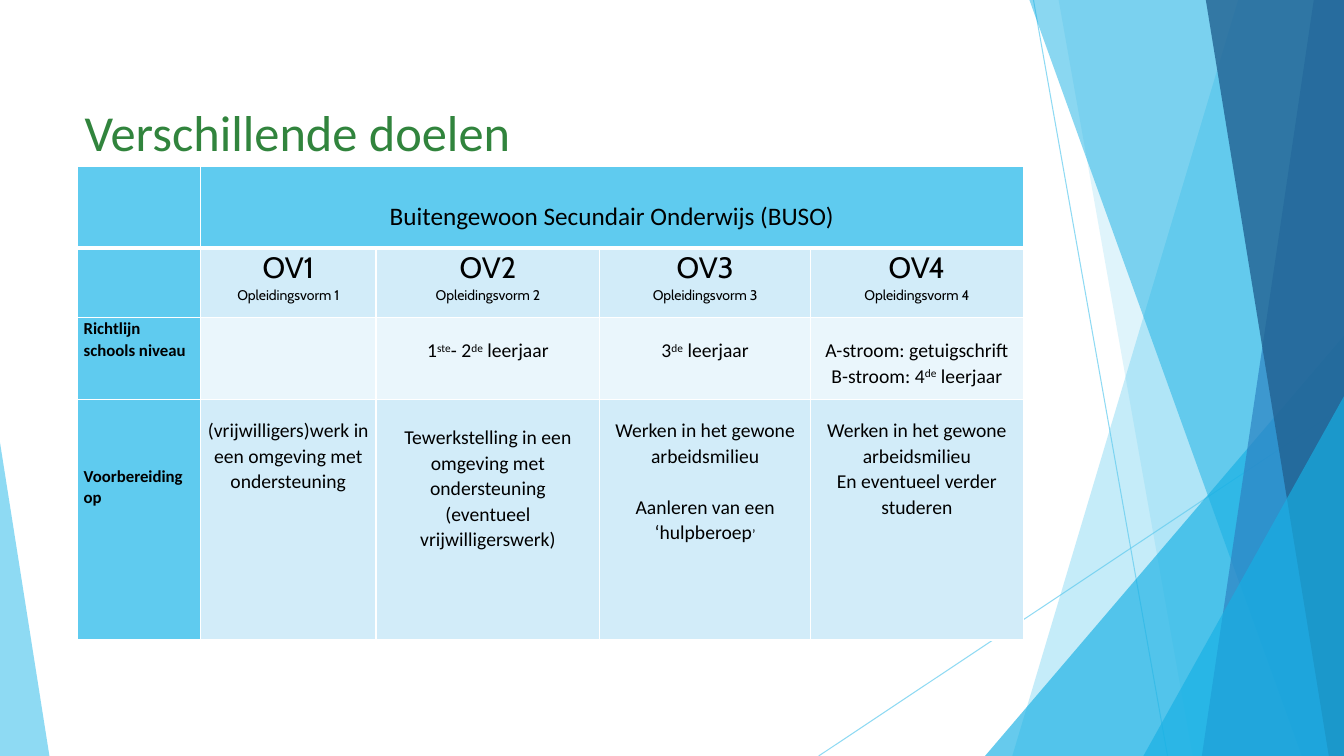
from lxml import etree
from pptx import Presentation
from pptx.dml import color
from pptx.enum import shapes, text
from pptx.oxml import ns
from pptx.util import Inches, Pt

WIDTH, HEIGHT = 13.33, 7.5
SKY, AQUA, BLUE, NAVY = "5FCBEF", "17B0E4", "2E83C3", "226292"
LIGHT, PALE, WHITE, BLACK, GREEN = "D2ECF9", "EAF6FC", "FFFFFF", "000000", "31843D"
COLUMNS = [1.22, 1.74, 2.22, 2.09, 2.11]
ROWS = [0.81, 0.69, 0.81, 2.39]


def rgb(value):
    return color.RGBColor.from_string(value)


def set_opacity(shape, percent):
    for node in shape._element.spPr.iter(ns.qn("a:srgbClr")):
        etree.SubElement(node, ns.qn("a:alpha")).set("val", str(percent * 1000))


def paint(shape, fill, opacity):
    shape.shadow.inherit = False
    shape.fill.solid()
    shape.fill.fore_color.rgb = rgb(fill)
    shape.line.fill.background()
    set_opacity(shape, opacity)


def add_thin_line(slide, start, end):
    points = [Inches(value) for value in (*start, *end)]
    line = slide.shapes.add_connector(shapes.MSO_CONNECTOR.STRAIGHT, *points)
    line.line.color.rgb = rgb(SKY)
    line.line.width = Pt(0.75)
    set_opacity(line, 70)
    etree.SubElement(line._element.spPr, ns.qn("a:effectLst"))


def add_band(slide, top_x, bottom_x, fill, opacity):
    builder = slide.shapes.build_freeform(Inches(top_x), 0)
    corners = [(WIDTH, 0), (WIDTH, HEIGHT), (bottom_x, HEIGHT)]
    builder.add_line_segments([(Inches(x), Inches(y)) for x, y in corners])
    paint(builder.convert_to_shape(), fill, opacity)


def add_corner(slide, left, top, width, apex, fill, opacity):
    shape = slide.shapes.add_shape(
        shapes.MSO_SHAPE.ISOSCELES_TRIANGLE,
        Inches(left), Inches(top), Inches(width), Inches(HEIGHT - top))
    shape.adjustments[0] = apex
    paint(shape, fill, opacity)


def add_run(paragraph, words, size, font="Calibri", ink=BLACK, bold=False, raised=False):
    run = paragraph.add_run()
    run.text = words
    run.font.size = Pt(size)
    run.font.name = font
    run.font.bold = bold
    run.font.color.rgb = rgb(ink)
    if raised:
        run._r.get_or_add_rPr().set("baseline", "30000")


def add_title(slide, words):
    box = slide.shapes.add_textbox(Inches(0.74), Inches(0.95), Inches(9.4), Inches(1.16))
    box.text_frame.word_wrap = True
    add_run(box.text_frame.paragraphs[0], words, 36, ink=GREEN)


def set_border(cell, side, index, width):
    line = etree.Element(ns.qn(f"a:ln{side}"), w=str(Pt(width)))
    fill = etree.SubElement(line, ns.qn("a:solidFill"))
    etree.SubElement(fill, ns.qn("a:srgbClr")).set("val", WHITE)
    cell._tc.get_or_add_tcPr().insert(index, line)


def style_cell(cell, row, column):
    cell.fill.solid()
    body = PALE if row == 2 else LIGHT
    cell.fill.fore_color.rgb = rgb(SKY if row == 0 or column == 0 else body)
    cell.margin_left = cell.margin_right = Inches(0.06)
    cell.margin_top = cell.margin_bottom = 0
    for index, side in enumerate("LRTB"):
        heavy = (row, side) in [(0, "B"), (1, "T")]
        set_border(cell, side, index, 3 if heavy else 1)


def add_paragraph(cell, parts, size, centred=True, gap=0, **style):
    frame = cell.text_frame
    paragraph = frame.add_paragraph() if frame.text else frame.paragraphs[0]
    paragraph.line_spacing = 1.07
    paragraph.space_before = Pt(gap)
    paragraph.alignment = text.PP_ALIGN.CENTER if centred else text.PP_ALIGN.LEFT
    for part in parts:
        add_run(paragraph, part, size, raised=part in ("ste", "de"), **style)
    return paragraph


def fill_cell(cell, top, paragraphs, size=14, **style):
    cell.margin_top = Inches(top)
    for parts in paragraphs:
        add_paragraph(cell, parts, size, **style)


def add_goals_table(slide):
    frame = slide.shapes.add_table(
        len(ROWS), len(COLUMNS), Inches(0.77), Inches(1.65),
        Inches(sum(COLUMNS)), Inches(sum(ROWS)))
    table = frame.table
    table.first_row = table.horz_banding = False
    for column, width in zip(table.columns, COLUMNS):
        column.width = Inches(width)
    for row, height in zip(table.rows, ROWS):
        row.height = Inches(height)
    for row in range(len(ROWS)):
        for column in range(len(COLUMNS)):
            style_cell(table.cell(row, column), row, column)

    table.cell(0, 1).merge(table.cell(0, 4))
    fill_cell(table.cell(0, 1), 0.33, [["Buitengewoon Secundair Onderwijs (BUSO)"]], 18)
    for number in range(1, 5):
        cell = table.cell(1, number)
        add_paragraph(cell, [f"OV{number}"], 21, font="Cabin")
        add_paragraph(cell, [f"Opleidingsvorm {number}"], 10, font="Cabin")

    labels = [(2, 0, "Richtlijn schools niveau"), (3, 0.65, "Voorbereiding op")]
    for row, top, label in labels:
        fill_cell(table.cell(row, 0), top, [[label]], 12, centred=False, bold=True)

    levels = [
        [["1", "ste", "- 2", "de", " leerjaar"]],
        [["3", "de", " leerjaar"]],
        [["A-stroom: getuigschrift"], ["B-stroom: 4", "de", " leerjaar"]],
    ]
    for column, level in enumerate(levels, 2):
        fill_cell(table.cell(2, column), 0.2, level)

    regular_work = ["Werken in het gewone arbeidsmilieu"]
    goals = [
        (0.18, [["(vrijwilligers)werk in een omgeving met ondersteuning"]]),
        (0.25, [["Tewerkstelling in een omgeving met ondersteuning"],
                ["(eventueel vrijwilligerswerk)"]]),
        (0.18, [regular_work]),
        (0.18, [regular_work, ["En eventueel verder studeren"]]),
    ]
    for column, (top, goal) in enumerate(goals, 1):
        fill_cell(table.cell(3, column), top, goal)
    helper_job = add_paragraph(
        table.cell(3, 3), ["Aanleren van een ‘hulpberoep"], 14, gap=18.3)
    add_run(helper_job, "’", 10)


def add_backdrop(slide):
    add_thin_line(slide, (10.25, 0), (11.58, HEIGHT))
    add_thin_line(slide, (WIDTH, 4.03), (8.12, HEIGHT))
    add_band(slide, 12.28, 10.04, SKY, 36)
    add_band(slide, 10.5, 11.83, SKY, 20)
    add_corner(slide, 9.77, 3.33, 3.56, 1, AQUA, 66)
    add_band(slide, 10.21, 12.91, AQUA, 50)
    add_band(slide, 13.03, 11.92, BLUE, 70)
    add_band(slide, 11.96, 13.18, NAVY, 80)
    add_corner(slide, 11.34, 3.93, 1.99, 1, AQUA, 66)
    add_corner(slide, 0, 4.39, 0.49, 0, SKY, 70)


def main():
    presentation = Presentation()
    presentation.slide_width = Inches(WIDTH)
    presentation.slide_height = Inches(HEIGHT)
    slide = presentation.slides.add_slide(presentation.slide_layouts[6])
    add_backdrop(slide)
    add_goals_table(slide)
    add_title(slide, "Verschillende doelen")
    presentation.save("out.pptx")


if __name__ == "__main__":
    main()
